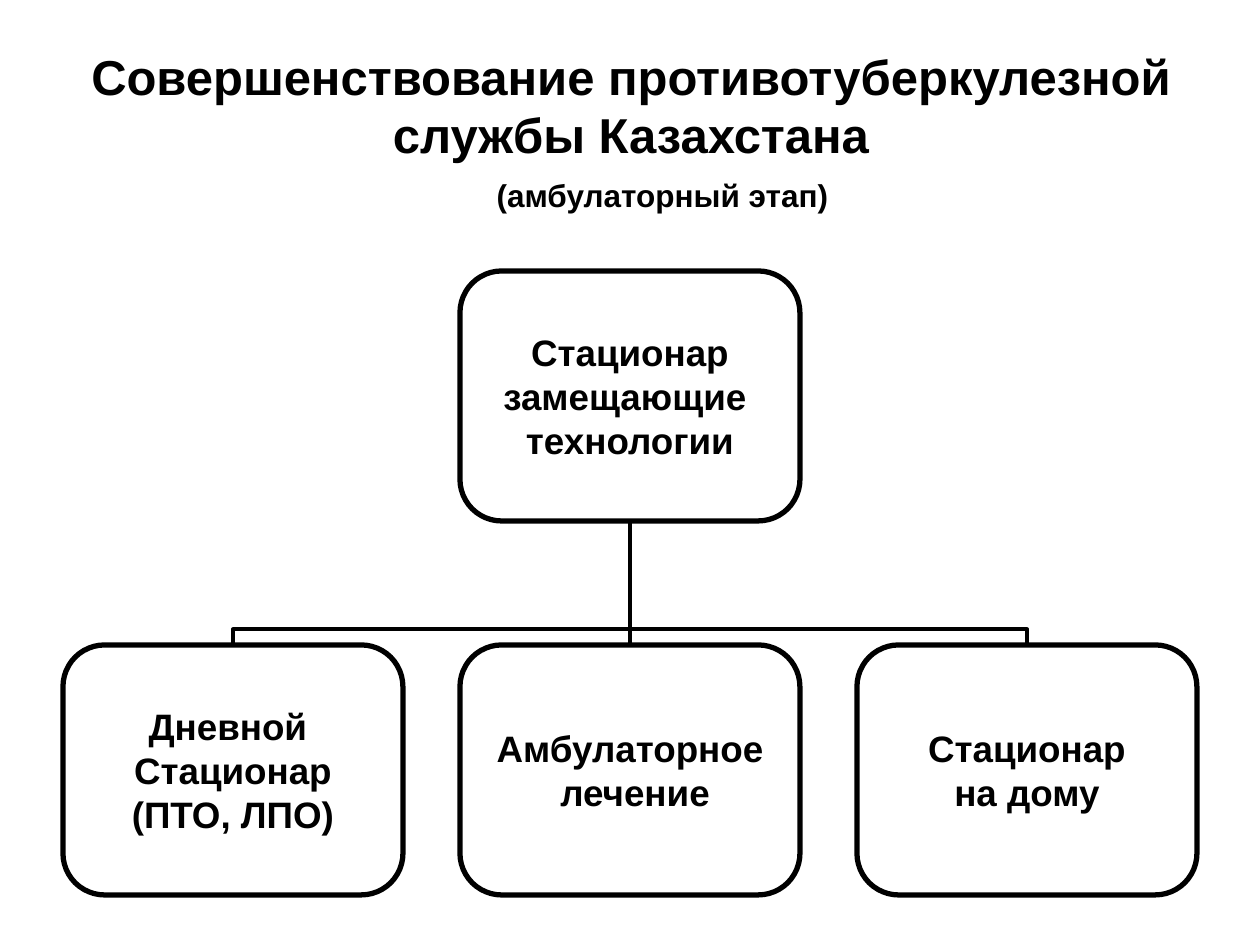
from dataclasses import dataclass

from lxml import etree
from pptx import Presentation
from pptx.dml.color import RGBColor
from pptx.enum import shapes, text
from pptx.oxml.ns import qn
from pptx.util import Pt

EMU_PER_PX = 914400 / 126


@dataclass(frozen=True)
class Theme:
    font: str = "Arial"
    ink: RGBColor = RGBColor(0, 0, 0)
    paper: RGBColor = RGBColor(255, 255, 255)
    title_size: int = 28
    subtitle_size: int = 18
    node_size: int = 21
    node_line: float = 3
    link_line: float = 2.25


THEME = Theme()


def px(length):
    return round(length * EMU_PER_PX)


def style_paragraph(para, size):
    para.alignment = text.PP_ALIGN.CENTER
    for span in para.runs:
        span.font.name = THEME.font
        span.font.size = Pt(size)
        span.font.bold = True
        span.font.color.rgb = THEME.ink


def add_heading(page, left, top, width, height):
    box = page.shapes.add_textbox(px(left), px(top), px(width), px(height))
    frame = box.text_frame
    frame.word_wrap = True
    frame.vertical_anchor = text.MSO_ANCHOR.MIDDLE
    frame.margin_top, frame.margin_bottom = px(6), px(86)
    frame.text = ("Совершенствование противотуберкулезной службы Казахстана\n"
                  "(амбулаторный этап)")
    title, subtitle = frame.paragraphs
    style_paragraph(title, THEME.title_size)
    style_paragraph(subtitle, THEME.subtitle_size)

    # The subtitle is a second-level line with a hanging indent
    subtitle.level = 1
    subtitle.space_before = Pt(7)
    properties = subtitle._p.get_or_add_pPr()
    properties.set("marL", str(px(102)))
    properties.set("indent", str(px(-39)))


def add_node(page, left, top, width, height, label):
    node = page.shapes.add_shape(shapes.MSO_SHAPE.ROUNDED_RECTANGLE,
                                 px(left), px(top), px(width), px(height))
    node.shadow.inherit = False
    node.fill.solid()
    node.fill.fore_color.rgb = THEME.paper
    node.line.color.rgb = THEME.ink
    node.line.width = Pt(THEME.node_line)
    frame = node.text_frame
    frame.margin_left = frame.margin_right = 0
    frame.margin_top = frame.margin_bottom = 0
    frame.word_wrap = False
    frame.vertical_anchor = text.MSO_ANCHOR.MIDDLE
    frame.text = label
    for para in frame.paragraphs:
        style_paragraph(para, THEME.node_size)


def add_link(page, child_x, child_y, parent_x, parent_y):
    """Run from a child's top up to its parent's bottom, bent if they are apart."""
    run, rise = parent_x - child_x, child_y - parent_y
    if run == 0:
        link = page.shapes.add_connector(shapes.MSO_CONNECTOR.STRAIGHT, px(child_x),
                                         px(child_y), px(parent_x), px(parent_y))
    else:
        # An elbow starts sideways, so lay it flat about the centre and turn it
        middle_x, middle_y = (child_x + parent_x) / 2, (child_y + parent_y) / 2
        reach = rise / 2 if run > 0 else -rise / 2
        link = page.shapes.add_connector(
            shapes.MSO_CONNECTOR.ELBOW,
            px(middle_x - reach), px(middle_y - abs(run) / 2),
            px(middle_x + reach), px(middle_y + abs(run) / 2))
        link._element.spPr.find(qn("a:xfrm")).set(
            "rot", str((270 if run > 0 else 90) * 60000))
        geometry = link._element.spPr.find(qn("a:prstGeom"))
        adjustments = geometry.find(qn("a:avLst"))
        if adjustments is None:
            adjustments = etree.SubElement(geometry, qn("a:avLst"))
        etree.SubElement(adjustments, qn("a:gd"), name="adj1", fmla="val 12600")
    link.line.color.rgb = THEME.ink
    link.line.width = Pt(THEME.link_line)
    etree.SubElement(link._element.spPr, qn("a:effectLst"))


def add_tree(page, left, top, width, height, root, children):
    node_width, node_height = 340, 250
    pitch = (width - node_width) / (len(children) - 1)
    centre = left + width / 2
    child_top = top + height - node_height
    child_lefts = [left + index * pitch for index in range(len(children))]

    # Links lie behind the nodes
    for child_left in reversed(child_lefts):
        add_link(page, child_left + node_width / 2, child_top,
                 centre, top + node_height)

    # Root, then the row of children
    add_node(page, centre - node_width / 2, top, node_width, node_height, root)
    for child_left, label in zip(child_lefts, children):
        add_node(page, child_left, child_top, node_width, node_height, label)


def main():
    deck = Presentation()
    deck.slide_width, deck.slide_height = px(1260), px(945)
    page = deck.slides.add_slide(deck.slide_layouts[6])
    page.background.fill.solid()
    page.background.fill.fore_color.rgb = THEME.paper
    add_heading(page, 64, 96, 1134, 148)
    add_tree(page, 63, 271, 1134, 624,
             "Стационар\nзамещающие \nтехнологии",
             ["Дневной \nСтационар\n(ПТО, ЛПО)",
              "Амбулаторное\n лечение",
              "Стационар\nна дому"])
    deck.save("out.pptx")


if __name__ == "__main__":
    main()
